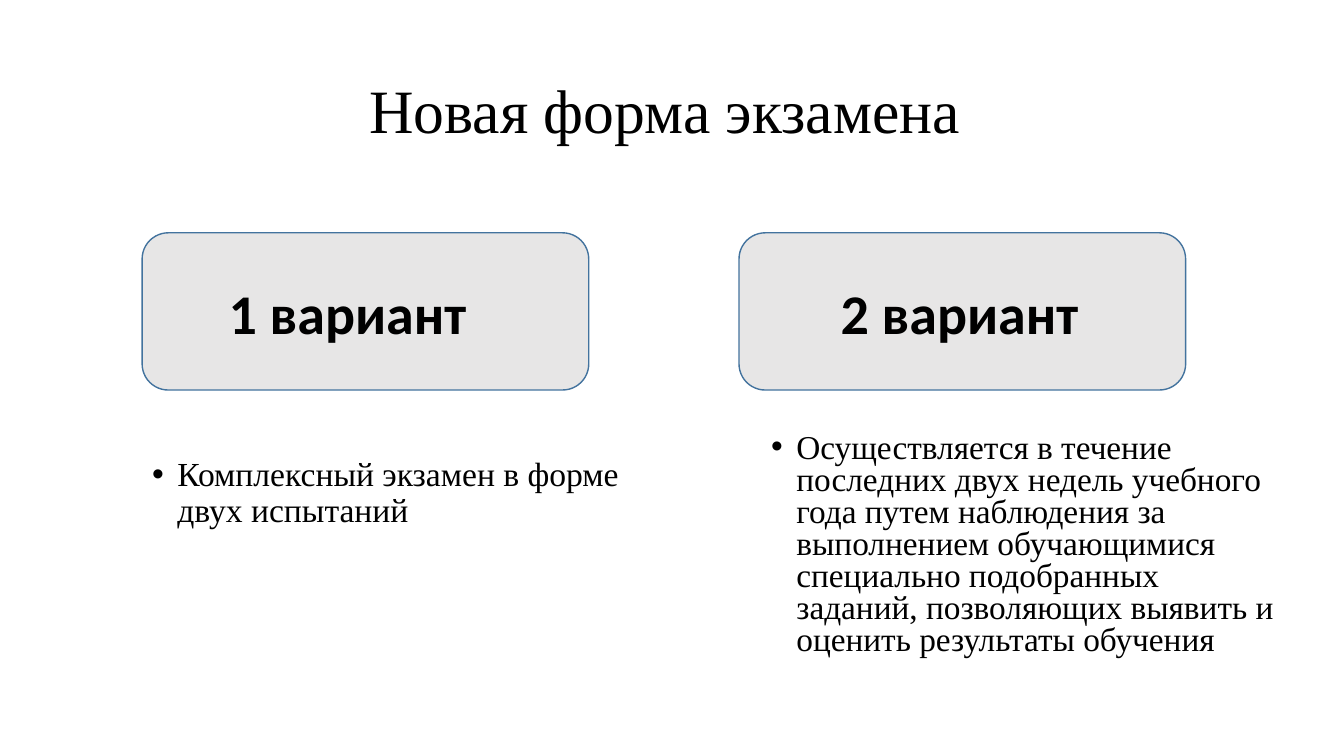
from pptx import Presentation
from pptx.dml.color import RGBColor
from pptx.enum.shapes import MSO_SHAPE as Shape
from pptx.enum.text import MSO_ANCHOR as Anchor, PP_ALIGN as Align
from pptx.oxml.xmlchemy import OxmlElement as Element
from pptx.util import Pt

EMU_PER_PX = 9144
SERIF = "Times New Roman"
SANS = "Calibri"
BLACK = "000000"
CARD_FILL = "E7E6E6"
CARD_LINE = "43739E"


def px(*lengths):
    return [length * EMU_PER_PX for length in lengths]


def color(value):
    return RGBColor.from_string(value)


def add_text(page, text, place, font_name, size, bold=False, align=Align.LEFT, anchor=Anchor.TOP):
    box = page.shapes.add_textbox(*px(*place))
    frame = box.text_frame
    frame.word_wrap = True
    frame.vertical_anchor = anchor
    para = frame.paragraphs[0]
    para.text = text
    para.alignment = align
    para.font.name = font_name
    para.font.size = Pt(size)
    para.font.bold = bold
    para.font.color.rgb = color(BLACK)
    return para


def add_bullet(page, text, place, size, line_spacing):
    para = add_text(page, text, place, SERIF, size)
    para.line_spacing = line_spacing
    para.space_before = Pt(10)
    indent, = px(25)
    properties = para._p.get_or_add_pPr()
    properties.set("marL", str(indent))
    properties.set("indent", str(-indent))
    font = Element("a:buFont")
    font.set("typeface", "Arial")
    bullet = Element("a:buChar")
    bullet.set("char", "•")
    properties.insert_element_before(font, "a:defRPr")
    properties.insert_element_before(bullet, "a:defRPr")


def add_card(page, left):
    card = page.shapes.add_shape(Shape.ROUNDED_RECTANGLE, *px(left, 231, 443, 156))
    card.shadow.inherit = False
    card.fill.solid()
    card.fill.fore_color.rgb = color(CARD_FILL)
    card.line.color.rgb = color(CARD_LINE)
    card.line.width = Pt(1)


def add_variant(page, heading, card_left, heading_left, text, text_place, size, line_spacing):
    add_card(page, card_left)
    add_text(page, heading, (heading_left, 271, 352, 77), SANS, 40, bold=True)
    add_bullet(page, text, text_place, size, line_spacing)


def main():
    deck = Presentation()
    deck.slide_width, deck.slide_height = px(1333, 750)
    page = deck.slides.add_slide(deck.slide_layouts[6])

    title = add_text(page, "Новая форма экзамена ", (92, 40, 1150, 145), SERIF, 44,
                     align=Align.CENTER, anchor=Anchor.MIDDLE)
    title.line_spacing = 0.9

    add_variant(page, "1 вариант", 141, 217,
                "Комплексный экзамен в форме двух испытаний",
                (141, 449, 518, 227), 24, 0.9)
    add_variant(page, "2 вариант", 733, 824,
                "Осуществляется в течение последних двух недель учебного года "
                "путем наблюдения за выполнением обучающимися специально подобранных "
                "заданий, позволяющих выявить и оценить результаты обучения",
                (755, 426, 518, 249), 23.8, 0.8)

    deck.save("out.pptx")


if __name__ == "__main__":
    main()
